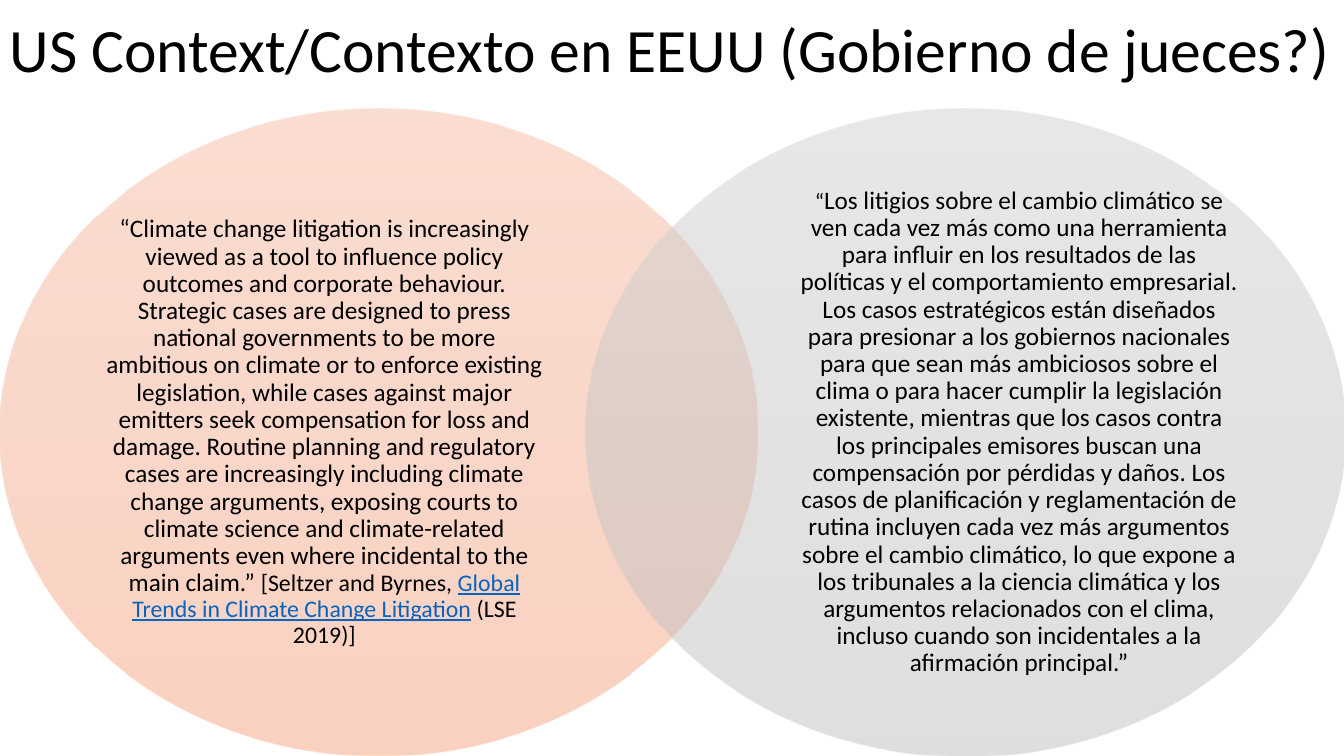
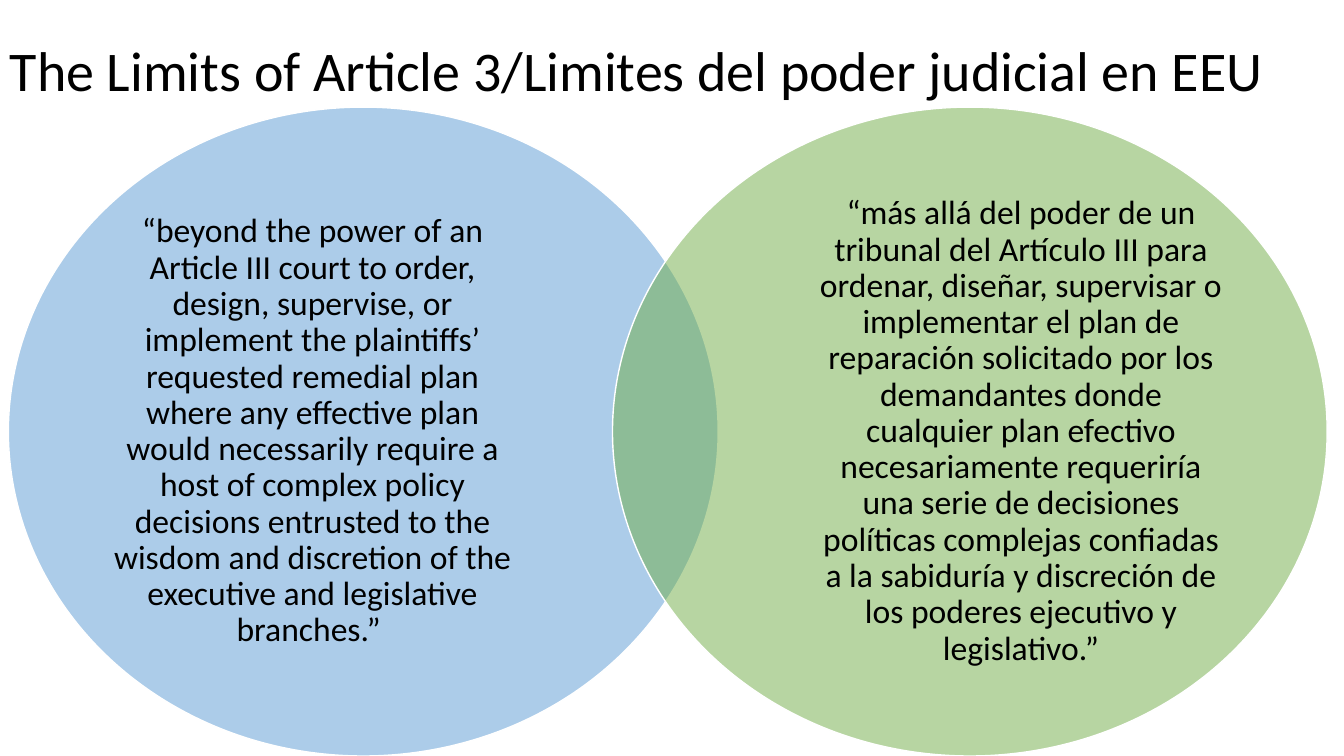
"""Builds two bilingual slides, each with a title over a pair of overlapping ellipses."""
from pptx import Presentation
from pptx.dml.color import RGBColor
from pptx.enum.shapes import MSO_SHAPE
from pptx.enum.text import MSO_ANCHOR, PP_ALIGN
from pptx.oxml import parse_xml
from pptx.oxml.ns import nsdecls
from pptx.util import Pt

ELLIPSE = MSO_SHAPE.OVAL
MIDDLE = MSO_ANCHOR.MIDDLE
LEFT, CENTER = PP_ALIGN.LEFT, PP_ALIGN.CENTER

FONT = "Calibri"
BLACK, WHITE, LINK = "000000", "FFFFFF", "0563C1"
WIDTH, HEIGHT = 960, 540
OUTER, TEXT_W, TEXT_TOP = 0.14, 0.577, 0.118
INNER = 1 - OUTER - TEXT_W

SLIDES = [
    {
        "title": "US Context/Contexto en EEUU (Gobierno de jueces?)",
        "title_size": 44,
        "title_height": 75,
        "top": 77.7,
        "outline": None,
        "ellipses": [
            {
                "left": 0, "width": 540.9, "text_at": OUTER,
                "fill": ["F7BDA5", "F5B196", "F8A582"],
                "runs": [
                    ("“Climate change litigation is increasingly viewed as a tool to influence "
                     "policy outcomes and corporate behaviour. Strategic cases are designed to "
                     "press national governments to be more ambitious on climate or to enforce "
                     "existing legislation, while cases against major emitters seek compensation "
                     "for loss and damage. Routine planning and regulatory cases are increasingly "
                     "including climate change arguments, exposing courts to climate science and "
                     "climate-related arguments even where incidental to the main claim.” ",
                     18, BLACK),
                    ("[Seltzer and Byrnes, ", 17, BLACK),
                    ("Global Trends in Climate Change Litigation", 17, LINK),
                    (" (LSE 2019)]", 17, BLACK),
                ],
            },
            {
                "left": 418.5, "width": 541.5, "text_at": INNER,
                "fill": ["D2D2D2", "C8C8C8", "C0C0C0"],
                "runs": [
                    ("“", 16, BLACK),
                    ("Los litigios sobre el cambio climático se ven cada vez más como una "
                     "herramienta para influir en los resultados de las políticas y el "
                     "comportamiento empresarial. Los casos estratégicos están diseñados para "
                     "presionar a los gobiernos nacionales para que sean más ambiciosos sobre el "
                     "clima o para hacer cumplir la legislación existente, mientras que los casos "
                     "contra los principales emisores buscan una compensación por pérdidas y "
                     "daños. Los casos de planificación y reglamentación de rutina incluyen cada "
                     "vez más argumentos sobre el cambio climático, lo que expone a los "
                     "tribunales a la ciencia climática y los argumentos relacionados con el "
                     "clima, incluso cuando son incidentales a la afirmación principal.”",
                     18, BLACK),
                ],
            },
        ],
    },
    {
        "title": "The Limits of Article 3/Limites del poder judicial en EEU",
        "title_size": 40,
        "title_height": 104.4,
        "top": 76.5,
        "outline": WHITE,
        "ellipses": [
            {
                "left": 6, "width": 507, "text_at": OUTER,
                "fill": ["5B9BD5"],
                "runs": [
                    ("“beyond the power of an Article III court to order, design, supervise, or "
                     "implement the plaintiffs’ requested remedial plan where any effective plan "
                     "would necessarily require a host of complex policy decisions entrusted to "
                     "the wisdom and discretion of the executive and legislative branches.” ",
                     24, BLACK),
                ],
            },
            {
                "left": 437.5, "width": 510.5, "text_at": INNER,
                "fill": ["70AD47"],
                "runs": [
                    ("“más allá del poder de un tribunal del Artículo III para ordenar, diseñar, "
                     "supervisar o implementar el plan de reparación solicitado por los "
                     "demandantes donde cualquier plan efectivo necesariamente requeriría una "
                     "serie de decisiones políticas complejas confiadas a la sabiduría y "
                     "discreción de los poderes ejecutivo y legislativo.”",
                     24, BLACK),
                ],
            },
        ],
    },
]


def rgb(value):
    """Turn a hex string into a colour."""
    return RGBColor.from_string(value)


def fill_half_clear(sp, colours):
    """Fill a shape at half opacity, with a downward gradient if several colours are given."""
    marks = [f'<a:srgbClr val="{rgb(c)}"><a:alpha val="50000"/></a:srgbClr>' for c in colours]
    if len(marks) == 1:
        xml = f'<a:solidFill {nsdecls("a")}>{marks[0]}</a:solidFill>'
    else:
        step = 100000 // (len(marks) - 1)
        stops = "".join(f'<a:gs pos="{i * step}">{m}</a:gs>' for i, m in enumerate(marks))
        xml = (f'<a:gradFill {nsdecls("a")} rotWithShape="1"><a:gsLst>{stops}</a:gsLst>'
               '<a:lin ang="5400000" scaled="0"/></a:gradFill>')
    sp.element.spPr.insert(2, parse_xml(xml))


def add_ellipse(s, left, top, width, height, colours, outline):
    """Draw one translucent ellipse."""
    sp = s.shapes.add_shape(ELLIPSE, Pt(left), Pt(top), Pt(width), Pt(height))
    sp.shadow.inherit = False
    fill_half_clear(sp, colours)
    if outline:
        sp.line.color.rgb = rgb(outline)
        sp.line.width = Pt(1)
    else:
        sp.line.fill.background()


def add_text(s, left, top, width, height, runs, align, inset=None):
    """Add one vertically centred paragraph made of (text, size, colour) runs."""
    tf = s.shapes.add_textbox(Pt(left), Pt(top), Pt(width), Pt(height)).text_frame
    tf.word_wrap = True
    tf.vertical_anchor = MIDDLE
    if inset is not None:
        tf.margin_left = tf.margin_right = tf.margin_top = tf.margin_bottom = Pt(inset)
    p = tf.paragraphs[0]
    p.alignment = align
    p.line_spacing = 0.9
    for text, size, colour in runs:
        r = p.add_run()
        r.text = text
        r.font.name = FONT
        r.font.size = Pt(size)
        r.font.color.rgb = rgb(colour)
        if colour == LINK:
            r.font.underline = True


def build_slide(prs, data):
    """Add one slide with its title and both ellipses."""
    s = prs.slides.add_slide(prs.slide_layouts[6])
    add_text(s, 0, 0, WIDTH, data["title_height"],
             [(data["title"], data["title_size"], BLACK)], LEFT)
    top = data["top"]
    height = HEIGHT - top
    for e in data["ellipses"]:
        left, width = e["left"], e["width"]
        add_ellipse(s, left, top, width, height, e["fill"], data["outline"])
        add_text(s, left + e["text_at"] * width, top + TEXT_TOP * height,
                 TEXT_W * width, (1 - 2 * TEXT_TOP) * height, e["runs"], CENTER, 0)


def main():
    """Build and save the presentation."""
    prs = Presentation()
    prs.slide_width, prs.slide_height = Pt(WIDTH), Pt(HEIGHT)
    for data in SLIDES:
        build_slide(prs, data)
    prs.save("out.pptx")


if __name__ == "__main__":
    main()
